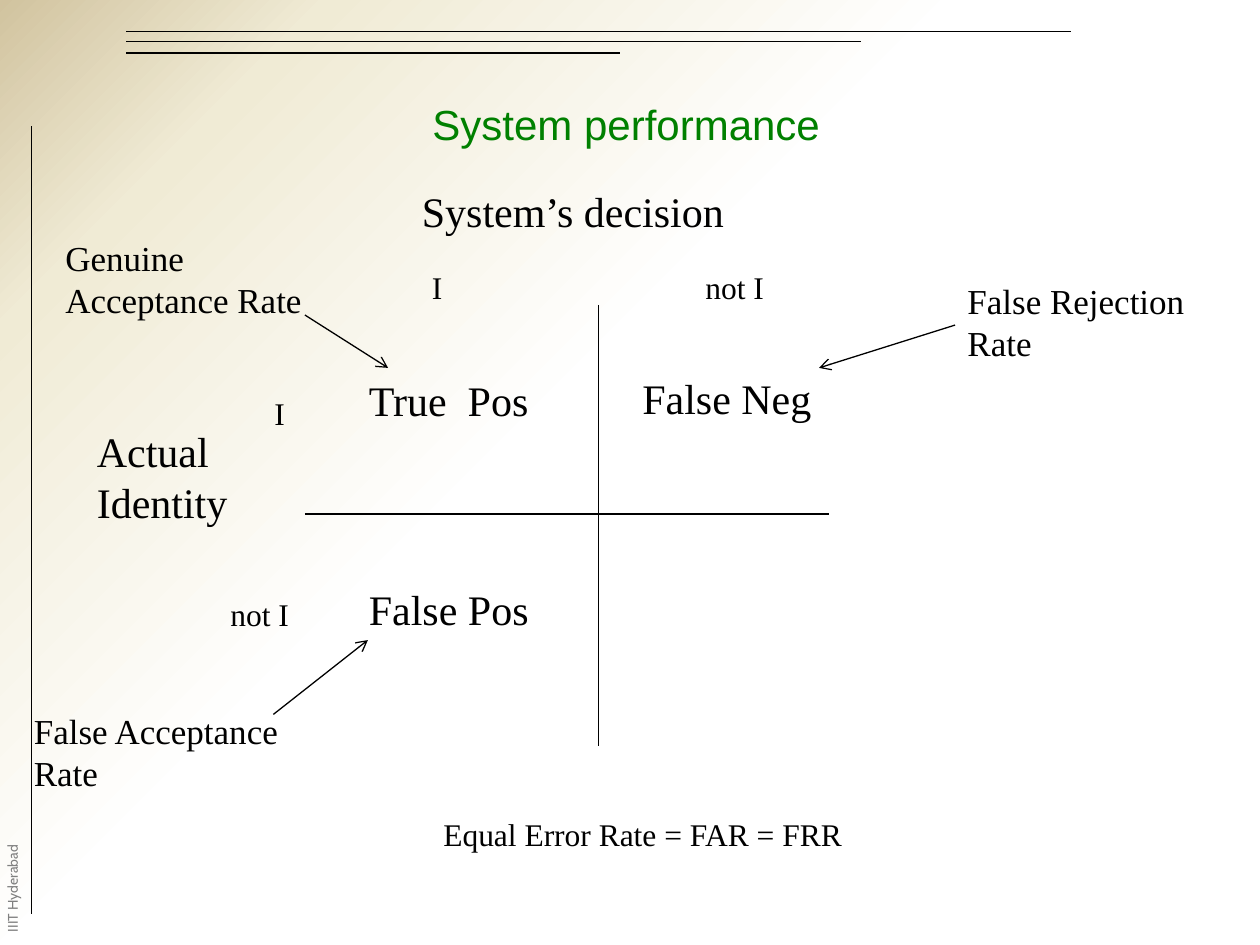
import pptx
import pptx.dml.color
import pptx.enum.shapes
import pptx.enum.text
import pptx.oxml
import pptx.oxml.ns
import pptx.util
from pptx.util import Inches

BLACK, GREEN, GRAY = "000000", "008000", "808080"
BACKGROUND_STOPS = [(56, "FFFFFF"), (85, "F0EBD5"), (100, "D1C39F")]

RULES = [
    (1, 0.25, 8.5, 0.25),
    (1, 0.33, 6.83, 0.33),
    (1, 0.42, 4.92, 0.42),
    (0.25, 1, 0.25, 7.25),
]
MATRIX_AXES = [(2.42, 4.08, 6.58, 4.08), (4.75, 2.42, 4.75, 5.92)]
RATE_ARROWS = [
    (7.58, 2.58, 6.5, 2.92),
    (2.42, 2.5, 3.08, 2.92),
    (2.17, 5.67, 2.92, 5.08),
]

LABELS = {
    24: [
        ("True  Pos", 2.83, 2.92, 1.75, 0.5),
        ("False Neg", 5, 2.91, 1.83, 0.5),
        ("False Pos", 2.83, 4.58, 1.83, 0.5),
        ("System’s decision", 3.25, 1.42, 3.17, 0.5),
        ("Actual Identity", 0.67, 3.33, 1.75, 0.91),
    ],
    20: [
        ("False Rejection Rate", 7.58, 2.17, 2.17, 0.77),
        ("Genuine Acceptance Rate", 0.42, 1.83, 2.17, 0.77),
        ("False Acceptance Rate", 0.17, 5.58, 2.17, 0.77),
    ],
    18: [
        ("I", 2.08, 3.08, 0.58, 0.42),
        ("not I", 1.73, 4.67, 0.86, 0.4),
        ("I", 3.33, 2.08, 0.58, 0.42),
        ("not I", 5.5, 2.08, 0.83, 0.4),
        ("Equal Error Rate = FAR = FRR", 3.42, 6.42, 3.92, 0.4),
    ],
}


def color(value):
    return pptx.dml.color.RGBColor.from_string(value)


def set_background(slide):
    stops = "".join(
        f'<a:gs pos="{position * 1000}"><a:srgbClr val="{value}"/></a:gs>'
        for position, value in [(0, BACKGROUND_STOPS[0][1])] + BACKGROUND_STOPS
    )
    background = pptx.oxml.parse_xml(
        f'<p:bg {pptx.oxml.ns.nsdecls("p", "a")}><p:bgPr><a:gradFill>'
        f'<a:gsLst>{stops}</a:gsLst><a:path path="circle">'
        '<a:fillToRect l="100000" t="100000"/></a:path></a:gradFill>'
        '<a:effectLst/></p:bgPr></p:bg>'
    )
    slide.element.cSld.insert(0, background)


def add_text(slide, text, left, top, width, height, size=24, font="Times New Roman",
             text_color=BLACK, align="LEFT", anchor="TOP", rotation=0,
             spacing=None, grow=True):
    box = slide.shapes.add_textbox(*map(Inches, (left, top, width, height)))
    box.rotation = rotation
    frame = box.text_frame
    frame.word_wrap = True
    if grow:
        frame.auto_size = pptx.enum.text.MSO_AUTO_SIZE.SHAPE_TO_FIT_TEXT
    frame.vertical_anchor = pptx.enum.text.MSO_ANCHOR[anchor]
    paragraph = frame.paragraphs[0]
    paragraph.alignment = pptx.enum.text.PP_ALIGN[align]
    if spacing:
        paragraph.line_spacing = spacing
    run = paragraph.add_run()
    run.text = text
    run.font.size = pptx.util.Pt(size)
    run.font.name = font
    run.font.color.rgb = color(text_color)


def add_line(slide, ends, arrow=False):
    connector = slide.shapes.add_connector(
        pptx.enum.shapes.MSO_CONNECTOR.STRAIGHT, *map(Inches, ends))
    connector.line.color.rgb = color(BLACK)
    connector.line.width = pptx.util.Pt(0.75)
    namespace = pptx.oxml.ns.nsdecls("a")
    if arrow:
        connector.line._get_or_add_ln().append(
            pptx.oxml.parse_xml(f'<a:tailEnd {namespace} type="arrow"/>'))
    connector._element.spPr.append(pptx.oxml.parse_xml(f"<a:effectLst {namespace}/>"))


def main():
    presentation = pptx.Presentation()
    presentation.slide_width = Inches(10)
    presentation.slide_height = Inches(7.5)
    slide = presentation.slides.add_slide(presentation.slide_layouts[6])
    set_background(slide)

    for ends in RULES:
        add_line(slide, ends)
    add_text(slide, "IIIT Hyderabad", -0.34, 6.92, 0.92, 0.23, size=8, font="Cabin",
             text_color=GRAY, rotation=270, spacing=0.83)
    add_text(slide, "System performance", 0.72, 0.56, 8.5, 0.85, font="Arial",
             text_color=GREEN, align="CENTER", anchor="MIDDLE", grow=False)

    for ends in MATRIX_AXES:
        add_line(slide, ends)
    for size, labels in LABELS.items():
        for label in labels:
            add_text(slide, *label, size=size)
    for ends in RATE_ARROWS:
        add_line(slide, ends, arrow=True)

    presentation.save("out.pptx")


if __name__ == "__main__":
    main()
